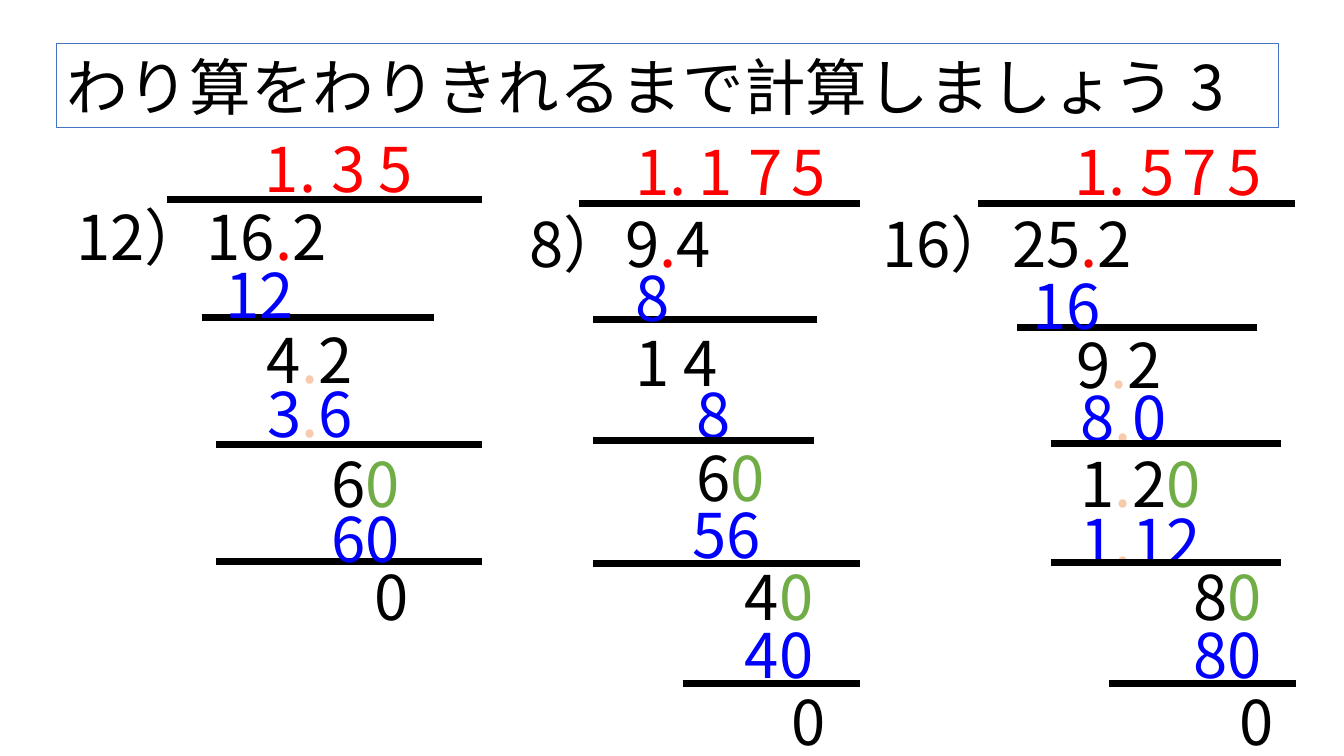
"""Build a slide with three long divisions worked out to the last digit."""
from lxml import etree
from pptx import Presentation
from pptx import util as u
from pptx.dml.color import RGBColor
from pptx.enum import shapes, text
from pptx.oxml.ns import qn

FONT = "Noto Sans CJK JP"
SIZE = 44
ROW_HEIGHT = 0.84
BLACK, RED, BLUE = "000000", "FF0000", "0000FF"
GREEN, PEACH, FRAME = "70AD47", "F8CBAD", "4472C4"

TITLE = "わり算をわりきれるまで計算しましょう 3"
TITLE_BOX = (0.56, 0.43, 12.12)

# Each row: top, rule above it (left, right, y) or None, cells (left, width, runs)
DIVISIONS = [
    [
        (1.25, (1.66, 4.78, 1.98), [(2.53, 0.87, [("1.", RED)]),
                                    (3.19, 0.64, [("3", RED)]),
                                    (3.66, 0.64, [("5", RED)])]),
        (1.92, None, [(0.66, 3.23, [("12）16", BLACK), (".", RED), ("2", BLACK)])]),
        (2.5, (2, 4.3, 3.15), [(2.14, 1.07, [("12", BLUE)])]),
        (3.14, None, [(2.55, 1.3, [("4", BLACK), (".", PEACH), ("2", BLACK)])]),
        (3.68, (2.14, 4.78, 4.41),
         [(2.55, 1.32, [("3", BLUE), (".", PEACH), ("6", BLUE)])]),
        (4.37, None, [(3.19, 1.09, [("6", BLACK), ("0", GREEN)])]),
        (4.92, (2.14, 4.78, 5.57), [(3.19, 1.09, [("60", BLUE)])]),
        (5.5, None, [(3.62, 0.64, [("0", BLACK)])]),
    ],
    [
        (1.28, (5.74, 8.53, 2.02), [(6.2, 0.87, [("1.", RED)]),
                                    (6.83, 0.64, [("1", RED)]),
                                    (7.33, 0.64, [("7", RED)]),
                                    (7.75, 0.64, [("5", RED)])]),
        (1.99, None, [(5.15, 2.36, [("8）9", BLACK), (".", RED), ("4", BLACK)])]),
        (2.53, (5.88, 8.1, 3.17), [(6.2, 0.64, [("8", BLUE)])]),
        (3.17, None, [(6.2, 1.29, [("1 4", BLACK)])]),
        (3.69, None, [(6.81, 0.62, [("8", BLUE)])]),
        (4.32, (5.88, 8.07, 4.37), [(6.81, 1.09, [("6", BLACK), ("0", GREEN)])]),
        (4.88, None, [(6.77, 1.18, [("56", BLUE)])]),
        (5.5, (5.88, 8.53, 5.59), [(7.29, 1.25, [("4", BLACK), ("0", GREEN)])]),
        (6.07, None, [(7.29, 1.25, [("40", BLUE)])]),
        (6.74, (6.77, 8.53, 6.78), [(7.75, 0.64, [("0", BLACK)])]),
    ],
    [
        (1.28, (9.7, 12.84, 2.02), [(10.56, 0.87, [("1.", RED)]),
                                    (11.21, 0.64, [("5", RED)]),
                                    (11.63, 0.64, [("7", RED)]),
                                    (12.08, 0.64, [("5", RED)])]),
        (1.99, None, [(8.65, 3.23, [("16）25", BLACK), (".", RED), ("2", BLACK)])]),
        (2.61, (10.09, 12.47, 3.25), [(10.14, 1.07, [("16", BLUE)])]),
        (3.19, None, [(10.58, 1.3, [("9", BLACK), (".", PEACH), ("2", BLACK)])]),
        (3.72, None, [(10.62, 1.3, [("8", BLUE), (".", PEACH), ("0", BLUE)])]),
        (4.37, (10.42, 12.71, 4.4),
         [(10.62, 1.75, [("1", BLACK), (".", PEACH), ("2", BLACK), ("0", GREEN)])]),
        (4.94, None, [(10.62, 1.75, [("1", BLUE), (".", PEACH), ("12", BLUE)])]),
        (5.5, (10.42, 12.71, 5.58), [(11.74, 1.25, [("8", BLACK), ("0", GREEN)])]),
        (6.07, None, [(11.74, 1.25, [("80", BLUE)])]),
        (6.74, (11, 12.85, 6.78), [(12.2, 0.64, [("0", BLACK)])]),
    ],
]
WRAPPED_FROM = 3


def color(value):
    return RGBColor.from_string(value)


def write(box, runs, wrap):
    frame = box.text_frame
    frame.word_wrap = wrap
    frame.auto_size = text.MSO_AUTO_SIZE.SHAPE_TO_FIT_TEXT
    line = frame.paragraphs[0]
    line.alignment = text.PP_ALIGN.LEFT
    for words, ink in runs:
        run = line.add_run()
        run.text = words
        run.font.size = u.Pt(SIZE)
        run.font.name = FONT
        run.font.color.rgb = color(ink)
        etree.SubElement(run.font._element, qn("a:ea"), typeface=FONT)


def add_title(slide):
    left, top, width = map(u.Inches, TITLE_BOX)
    title = slide.shapes.add_shape(shapes.MSO_SHAPE.RECTANGLE,
                                   left, top, width, u.Inches(ROW_HEIGHT))
    title.shadow.inherit = False
    title.fill.background()
    title.line.color.rgb = color(FRAME)
    title.line.width = u.Pt(0.75)
    write(title, [(TITLE, BLACK)], False)


def add_rule(slide, left, right, y):
    start, end, height = map(u.Inches, (left, right, y))
    rule = slide.shapes.add_connector(shapes.MSO_CONNECTOR.STRAIGHT,
                                      start, height, end, height)
    rule.line.color.rgb = color(BLACK)
    rule.line.width = u.Pt(4.5)
    etree.SubElement(rule._element.spPr, qn("a:effectLst"))


def add_division(slide, rows):
    for index, (top, rule, cells) in enumerate(rows):
        if rule:
            add_rule(slide, *rule)
        for left, width, runs in cells:
            cell = slide.shapes.add_textbox(
                *map(u.Inches, (left, top, width, ROW_HEIGHT)))
            write(cell, runs, index >= WRAPPED_FROM)


def main():
    deck = Presentation()
    deck.slide_width, deck.slide_height = u.Inches(13.33), u.Inches(7.5)
    slide = deck.slides.add_slide(deck.slide_layouts[6])
    add_title(slide)
    for rows in DIVISIONS:
        add_division(slide, rows)
    deck.save("out.pptx")


if __name__ == "__main__":
    main()
